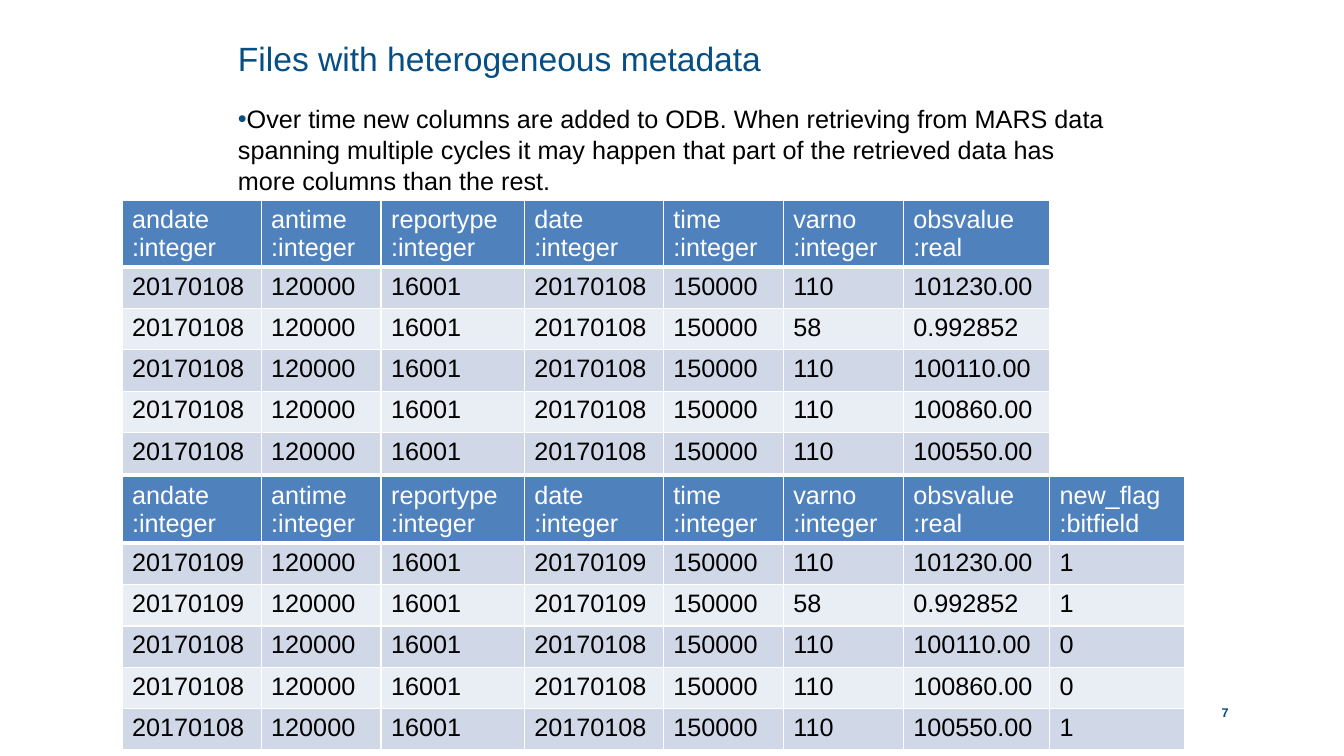
from lxml.etree import SubElement
from pptx import Presentation
from pptx.dml.color import RGBColor
from pptx.enum.text import MSO_ANCHOR as Anchor, MSO_AUTO_SIZE as Fit, PP_ALIGN as Align
from pptx.oxml.ns import qn
from pptx.util import Inches, Pt

TITLE = "Files with heterogeneous metadata"
BODY = ("Over time new columns are added to ODB. When retrieving from MARS data "
        "spanning multiple cycles it may happen that part of the retrieved data "
        "has more columns than the rest.")
PAGE = "7"

# name, type, width
COLS = [("andate", "integer", 1.38), ("antime", "integer", 1.19),
        ("reportype", "integer", 1.42), ("date", "integer", 1.38),
        ("time", "integer", 1.19), ("varno", "integer", 1.19),
        ("obsvalue", "real", 1.45)]
FLAG = ("new_flag", "bitfield", 1.34)
# varno, obsvalue
OBS = [("110", "101230.00"), ("58", "0.992852"), ("110", "100110.00"),
       ("110", "100860.00"), ("110", "100550.00")]
OLD, NEW = "20170108", "20170109"
DATES = [NEW, NEW, OLD, OLD, OLD]
FLAGS = ["1", "1", "0", "0", "1"]

LEFT, HEAD_H, ROW_H = 1.21, 0.66, 0.41
OLD_TOP, NEW_TOP = 1.99, 4.73
COLOR = {"navy": "064E83", "black": "000000", "white": "FFFFFF",
         "head": "4F81BD", "odd": "D0D8E8", "even": "E9EDF4"}


def rgb(name):
    return RGBColor.from_string(COLOR[name])


def write(frame, text, size=18, color="black", bold=False, align=Align.LEFT,
          line=None, inset=None, anchor=Anchor.TOP):
    frame.word_wrap = True
    frame.vertical_anchor = anchor
    if inset is not None:
        frame.auto_size = Fit.NONE
        frame.margin_left = frame.margin_right = Inches(inset)
        frame.margin_top = frame.margin_bottom = Inches(inset)
    par = frame.paragraphs[0]
    par.text = text
    par.alignment = align
    par.space_before = Pt(0)
    if line:
        par.line_spacing = Pt(line)
    for run in par.runs:
        font = run.font
        font.name, font.size, font.bold = "Arial", Pt(size), bold
        font.color.rgb = rgb(color)
    return par


def place(shape, left, top, width, height):
    shape.left, shape.top = Inches(left), Inches(top)
    shape.width, shape.height = Inches(width), Inches(height)


def bullet(par, char, color):
    props = par._p.get_or_add_pPr()
    props.set("marL", "0")
    props.set("indent", str(Inches(-0.2)))
    tint = SubElement(props, qn("a:buClr"))
    SubElement(tint, qn("a:srgbClr"), val=COLOR[color])
    SubElement(props, qn("a:buChar"), char=char)


def edge(cell, base):
    """Draw white cell borders, with the bottom one base points wide."""
    props = cell._tc.get_or_add_tcPr()
    sides = [("lnL", 1), ("lnR", 1), ("lnT", 1), ("lnB", base)]
    for spot, (side, width) in enumerate(sides):
        line = SubElement(props, qn("a:" + side), w=str(Pt(width)))
        fill = SubElement(line, qn("a:solidFill"))
        SubElement(fill, qn("a:srgbClr"), val=COLOR["white"])
        props.insert(spot, line)


def add_grid(slide, top, cols, rows):
    heads = [f"{name}\v:{kind}" for name, kind, _ in cols]
    grid = [heads] + rows
    width = sum(col[2] for col in cols)
    high = HEAD_H + ROW_H * len(rows)
    table = slide.shapes.add_table(len(grid), len(cols), Inches(LEFT), Inches(top),
                                   Inches(width), Inches(high)).table
    for col, (_, _, wide) in zip(table.columns, cols):
        col.width = Inches(wide)
    for r, row in enumerate(grid):
        table.rows[r].height = Inches(ROW_H if r else HEAD_H)
        shade = ("even", "odd")[r % 2] if r else "head"
        for c, text in enumerate(row):
            cell = table.cell(r, c)
            cell.fill.solid()
            cell.fill.fore_color.rgb = rgb(shade)
            edge(cell, 1 if r else 3)
            write(cell.text_frame, text, color="black" if r else "white")


def fill_rows(dates):
    return [[day, "120000", "16001", day, "150000", *obs]
            for day, obs in zip(dates, OBS)]


def main():
    deck = Presentation()
    deck.slide_width, deck.slide_height = Inches(13.33), Inches(7.5)
    slide = deck.slides.add_slide(deck.slide_layouts[1])

    title, body = slide.placeholders
    place(title, 2.36, 0.39, 8.61, 0.4)
    write(title.text_frame, TITLE, size=24, color="navy", line=28, inset=0)
    place(body, 2.36, 1.02, 8.61, 5.45)
    par = write(body.text_frame, BODY, line=22, inset=0)
    bullet(par, "•", "navy")

    page = slide.shapes.add_textbox(Inches(10.97), Inches(6.9), Inches(2.36), Inches(0.24))
    write(page.text_frame, PAGE, size=9, color="navy", bold=True,
          align=Align.CENTER, inset=0, anchor=Anchor.BOTTOM)

    flagged = [row + [flag] for row, flag in zip(fill_rows(DATES), FLAGS)]
    add_grid(slide, NEW_TOP, COLS + [FLAG], flagged)
    add_grid(slide, OLD_TOP, COLS, fill_rows([OLD] * len(OBS)))
    deck.save("out.pptx")


if __name__ == "__main__":
    main()
